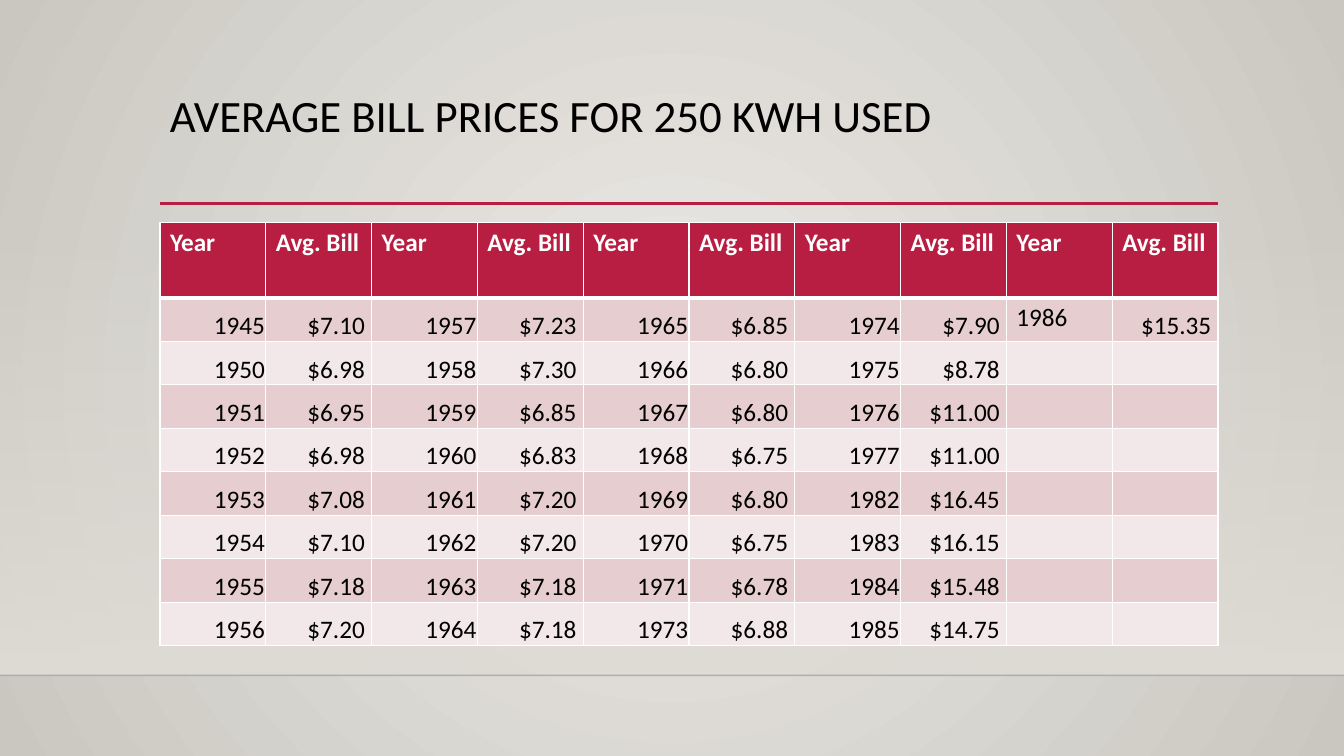
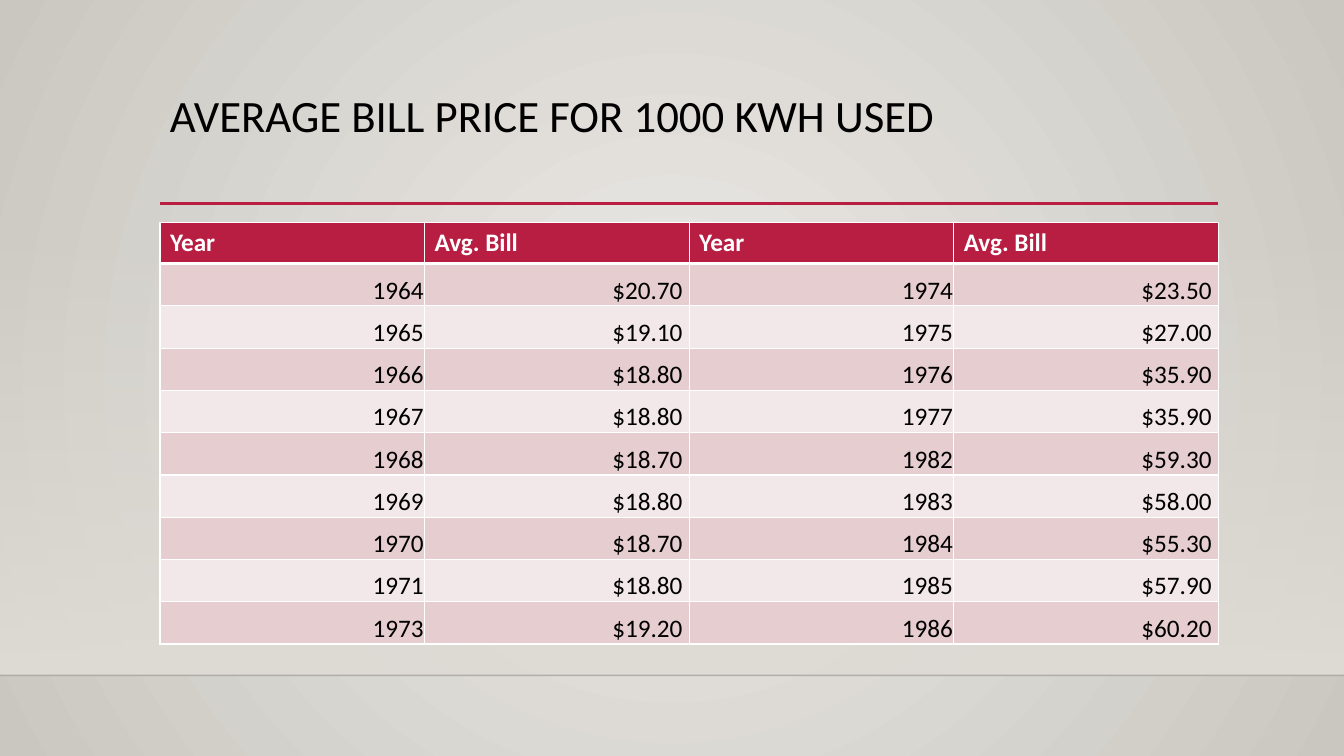
from dataclasses import dataclass

from lxml.etree import SubElement
from pptx import Presentation
from pptx.dml.color import RGBColor as RGB
from pptx.enum.shapes import MSO_CONNECTOR as Conn, MSO_SHAPE as Shape
from pptx.enum.text import MSO_ANCHOR as Anchor, PP_ALIGN as Align
from pptx.oxml.ns import qn
from pptx.util import Pt


@dataclass(frozen=True)
class Theme:
    font: str = "Calibri"
    title_size: float = 32
    table_size: float = 18
    ink: str = "000000"
    white: str = "FFFFFF"
    accent: str = "B71E42"
    bands: tuple = ("E6CDCF", "F3E8E9")
    glow: tuple = ("ECEAE7", "CAC7C1")
    haze: str = "DFDBD5"
    floor: str = "000001"


T = Theme()
WIDTH, HEIGHT = 960, 540
LEFT, CONTENT_W = 114.3, 756
RULE_Y, TABLE_Y, FLOOR_Y = 145.5, 158.8, 482.4

BILLS_250 = {
    1945: 7.10, 1950: 6.98, 1951: 6.95, 1952: 6.98, 1953: 7.08, 1954: 7.10,
    1955: 7.18, 1956: 7.20, 1957: 7.23, 1958: 7.30, 1959: 6.85, 1960: 6.83,
    1961: 7.20, 1962: 7.20, 1963: 7.18, 1964: 7.18, 1965: 6.85, 1966: 6.80,
    1967: 6.80, 1968: 6.75, 1969: 6.80, 1970: 6.75, 1971: 6.78, 1973: 6.88,
    1974: 7.90, 1975: 8.78, 1976: 11.00, 1977: 11.00, 1982: 16.45,
    1983: 16.15, 1984: 15.48, 1985: 14.75, 1986: 15.35,
}
BILLS_1000 = {
    1964: 20.70, 1965: 19.10, 1966: 18.80, 1967: 18.80, 1968: 18.70,
    1969: 18.80, 1970: 18.70, 1971: 18.80, 1973: 19.20, 1974: 23.50,
    1975: 27.00, 1976: 35.90, 1977: 35.90, 1982: 59.30, 1983: 58.00,
    1984: 55.30, 1985: 57.90, 1986: 60.20,
}


def write(tf, text, *, size, color=T.ink, bold=False, align=Align.LEFT, spacing=1.0):
    p = tf.paragraphs[0]
    p.alignment = align
    p.line_spacing = spacing
    r = p.add_run()
    r.text = text
    r.font.name = T.font
    r.font.size = Pt(size)
    r.font.bold = bold
    r.font.color.rgb = RGB.from_string(color)


def set_alpha(element, percent):
    color = next(element.iter(qn("a:srgbClr")))
    SubElement(color, qn("a:alpha"), val=str(percent * 1000))


def set_gradient(fill, colors):
    fill.gradient()
    for stop, color in zip(fill.gradient_stops, colors):
        stop.color.rgb = RGB.from_string(color)


def set_background(master):
    set_gradient(master.background.fill, T.glow)
    lin = next(master.element.iter(qn("a:lin")))
    grad = lin.getparent()
    grad.remove(lin)
    radial = SubElement(grad, qn("a:path"), path="circle")
    SubElement(radial, qn("a:fillToRect"), l="50000", t="50000", r="50000", b="50000")


def add_line(s, x, y, w, *, color, weight, alpha=None):
    line = s.shapes.add_connector(Conn.STRAIGHT, Pt(x), Pt(y), Pt(x + w), Pt(y))
    line.line.color.rgb = RGB.from_string(color)
    line.line.width = Pt(weight)
    if alpha is not None:
        set_alpha(line.line._ln, alpha)
    SubElement(line.element.spPr, qn("a:effectLst"))


def add_haze(s):
    top = RULE_Y + 13.5
    sp = s.shapes.add_shape(Shape.RECTANGLE, 0, Pt(top), Pt(WIDTH), Pt(FLOOR_Y - top))
    sp.shadow.inherit = False
    sp.line.fill.background()
    set_gradient(sp.fill, (T.haze, T.haze))
    sp.fill.gradient_angle = 270
    set_alpha(next(sp.element.iter(qn("a:gs"))), 0)


def add_title(s, text):
    sp = s.shapes.add_textbox(Pt(LEFT), Pt(63.4), Pt(CONTENT_W), Pt(82.8))
    tf = sp.text_frame
    tf.word_wrap = True
    tf.vertical_anchor = Anchor.TOP
    write(tf, text, size=T.title_size, spacing=0.9)


def add_slide(prs, title):
    s = prs.slides.add_slide(prs.slide_layouts[6])
    add_haze(s)
    add_line(s, 0, FLOOR_Y, WIDTH, color=T.floor, weight=1, alpha=20)
    add_line(s, LEFT, RULE_Y, CONTENT_W, color=T.accent, weight=2.5)
    add_title(s, title)
    return s


def style_cell(cell, fill, *, top=1, bottom=1):
    tc_pr = cell._tc.get_or_add_tcPr()
    for side, weight in (("L", 1), ("R", 1), ("T", top), ("B", bottom)):
        ln = SubElement(tc_pr, qn(f"a:ln{side}"), w=str(Pt(weight)))
        SubElement(SubElement(ln, qn("a:solidFill")), qn("a:srgbClr"), val=T.white)
    cell.fill.solid()
    cell.fill.fore_color.rgb = RGB.from_string(fill)


def write_value(cell, text, right_inset):
    cell.vertical_anchor = Anchor.BOTTOM
    cell.margin_left = cell.margin_top = Pt(0.7)
    cell.margin_right = Pt(right_inset)
    cell.margin_bottom = 0
    write(cell.text_frame, text, size=T.table_size, align=Align.RIGHT)


def add_bill_table(s, bills, *, n_rows, header_h, row_h, left_year=None):
    n_cols = -(-len(bills) // n_rows) * 2
    frame = s.shapes.add_table(n_rows + 1, n_cols, Pt(LEFT), Pt(TABLE_Y),
                               Pt(CONTENT_W), Pt(header_h + n_rows * row_h))
    table = frame.table
    table.horz_banding = False
    for col in table.columns:
        col.width = Pt(CONTENT_W / n_cols)
    for i, row in enumerate(table.rows):
        row.height = Pt(row_h if i else header_h)
        for cell in row.cells:
            if i:
                style_cell(cell, T.bands[(i - 1) % 2], top=3 if i == 1 else 1)
            else:
                style_cell(cell, T.accent, bottom=3)
    for c in range(n_cols):
        write(table.cell(0, c).text_frame, ("Year", "Avg. Bill")[c % 2],
              size=T.table_size, color=T.white, bold=True)
    for i, (year, bill) in enumerate(bills.items()):
        group, row = divmod(i, n_rows)
        year_cell = table.cell(row + 1, group * 2)
        if year == left_year:
            write(year_cell.text_frame, str(year), size=T.table_size)
        else:
            write_value(year_cell, str(year), 0.7)
        write_value(table.cell(row + 1, group * 2 + 1), f"${bill:.2f}", 4.8)


def main():
    prs = Presentation()
    prs.slide_width, prs.slide_height = Pt(WIDTH), Pt(HEIGHT)
    set_background(prs.slide_master)

    s = add_slide(prs, "AVERAGE BILL PRICES FOR 250 KWH USED")
    add_bill_table(s, BILLS_250, n_rows=8, header_h=54, row_h=31.05, left_year=1986)

    s = add_slide(prs, "AVERAGE BILL PRICE FOR 1000 KWH USED")
    add_bill_table(s, BILLS_1000, n_rows=9, header_h=29.5, row_h=30.2)

    prs.save("out.pptx")


if __name__ == "__main__":
    main()
